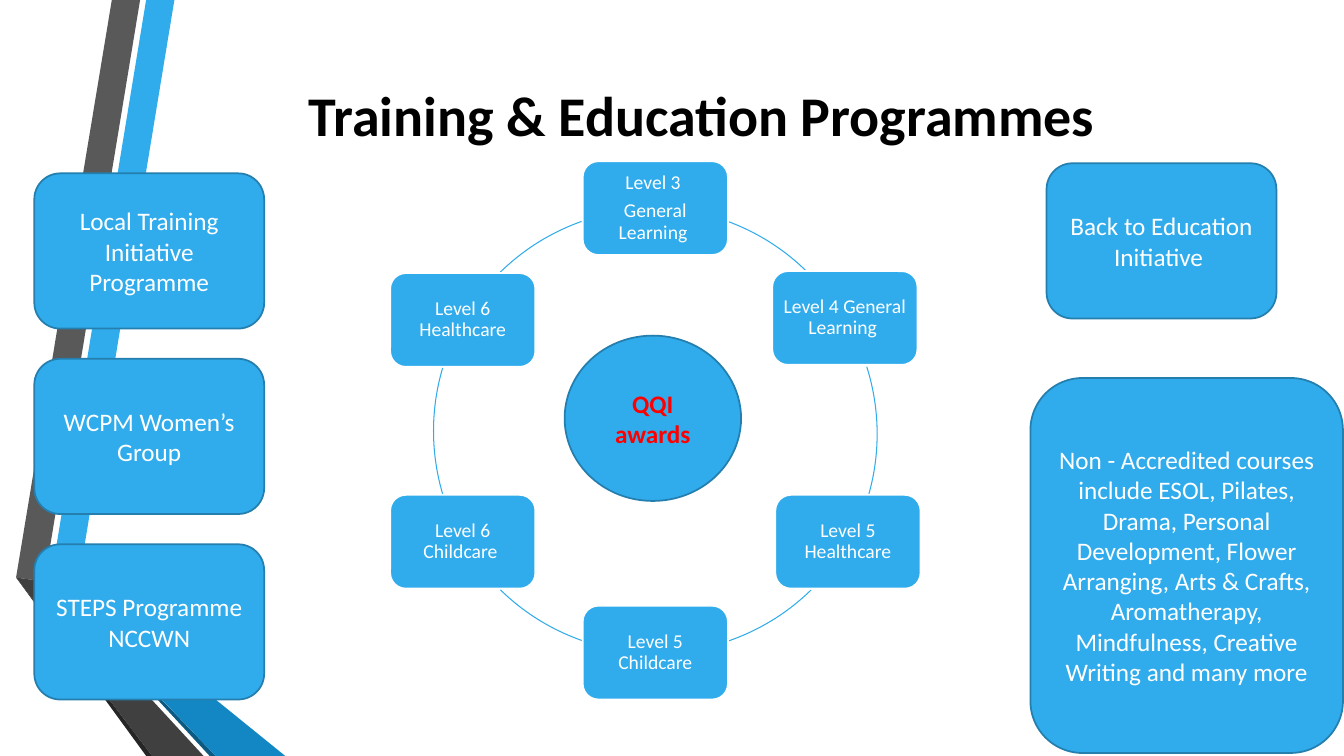
from pptx import Presentation
from pptx.dml.color import RGBColor
from pptx.enum.shapes import MSO_SHAPE
from pptx.enum.text import MSO_ANCHOR, PP_ALIGN
from pptx.util import Pt

PX = 9144
ROUND, OVAL, ARC = MSO_SHAPE.ROUNDED_RECTANGLE, MSO_SHAPE.OVAL, MSO_SHAPE.ARC
MIDDLE, CENTER = MSO_ANCHOR.MIDDLE, PP_ALIGN.CENTER
BLUE, EDGE, WHITE, RED, BLACK = "30ACEC", "247FAF", "FFFFFF", "FF0000", "000000"

RIBBON = [
    ("30ACEC", [(50, 578), (77, 583), (173, 0), (145, 0)]),
    ("595959", [(139, 0), (111, 0), (16, 573), (44, 577)]),
    ("262626", [(16, 573), (145, 750), (151, 750)]),
    ("0C5A82", [(50, 579), (208, 750), (214, 750)]),
    ("1287C3", [(50, 578), (214, 750), (283, 750), (77, 583)]),
    ("404040", [(202, 750), (48, 583), (44, 577), (16, 573), (151, 750)]),
]
LEVELS = [
    ("Level 3 \nGeneral Learning ", 191, 0),
    ("Level 4 General Learning ", 379, 109),
    ("Level 5 Healthcare", 382, 331),
    ("Level 5 Childcare", 191, 441),
    ("Level 6 Childcare ", 0, 331),
    ("Level 6 Healthcare", 0, 111),
]
ARCS = [
    (38, 46, 290.6, 314.1), (42, 50, 342.4, 15.7), (43, 47, 45.7, 70.8),
    (43, 47, 109.4, 134.4), (43, 47, 163.5, 196.5), (43, 47, 225.6, 250.5),
]
LOCAL = ["Local Training Initiative Programme", "WCPM Women’s Group",
         "STEPS Programme\nNCCWN"]
COURSES = ("Non - Accredited courses include ESOL, Pilates, Drama, Personal "
           "Development, Flower Arranging, Arts & Crafts, Aromatherapy, "
           "Mindfulness, Creative Writing and many more")


def color(code):
    """Turn a hex string into a colour."""
    return RGBColor.from_string(code)


def place(shape, box):
    """Move a shape to a box given in px."""
    shape.left, shape.top, shape.width, shape.height = [n * PX for n in box]


def write(shape, text, size, ink=WHITE, bold=False):
    """Fill a shape with centred text."""
    frame = shape.text_frame
    frame.text = text
    frame.word_wrap = True
    frame.vertical_anchor = MIDDLE
    for para in frame.paragraphs:
        para.alignment = CENTER
        font = para.font
        font.name, font.size, font.bold = "Calibri", Pt(size), bold
        font.color.rgb = color(ink)
    return frame


def add_form(slide, kind, box, line, width=1.25):
    """Add a blue preset shape with an outline."""
    shape = slide.shapes.add_shape(kind, *[n * PX for n in box])
    shape.shadow.inherit = False
    shape.fill.solid()
    shape.fill.fore_color.rgb = color(BLUE)
    shape.line.color.rgb = color(line)
    shape.line.width = Pt(width)
    return shape


def add_card(slide, text, box):
    """Add a rounded card with large text."""
    write(add_form(slide, ROUND, box, EDGE), text, 18)


def add_ribbon(slide):
    """Draw the folded ribbon along the left edge."""
    for code, points in RIBBON:
        pen = slide.shapes.build_freeform(*points[0], scale=PX)
        pen.add_line_segments(points[1:], close=True)
        band = pen.convert_to_shape()
        band.shadow.inherit = False
        band.fill.solid()
        band.fill.fore_color.rgb = color(code)
        band.line.fill.background()


def add_title(slide, text, box):
    """Set the slide title."""
    place(slide.shapes.title, box)
    write(slide.shapes.title, text, 40, BLACK, True)


def add_cycle(slide, left, top):
    """Draw the ring of award levels around its hub."""
    for x, y, start, end in ARCS:
        arc = add_form(slide, ARC, (left + x, top + y, 441, 441), BLUE, 0.75)
        arc.fill.background()
        arc.adjustments[0], arc.adjustments[1] = start * 0.6, end * 0.6
    for text, x, y in LEVELS:
        node = add_form(slide, ROUND, (left + x, top + y, 144, 93), WHITE)
        frame = write(node, text, 14)
        frame.margin_left = frame.margin_right = 6 * PX
        frame.margin_top = frame.margin_bottom = 6 * PX
        for para in frame.paragraphs:
            para.line_spacing = 0.9
            para.space_after = Pt(5)
    hub = add_form(slide, OVAL, (left + 173, top + 173, 175, 164), EDGE)
    write(hub, "QQI awards", 18, RED, True)


def add_local(slide, left, top):
    """Stack the local programme cards."""
    for row, text in enumerate(LOCAL):
        add_card(slide, text, (left, top + row * 184, 228, 154))


def add_further(slide, left, top):
    """Place the further education cards."""
    add_card(slide, "Back to Education Initiative ", (left + 16, top, 228, 154))
    add_card(slide, COURSES, (left, top + 213, 310, 372))


def main():
    """Build and save the slide."""
    deck = Presentation()
    deck.slide_width, deck.slide_height = 1333 * PX, 750 * PX
    slide = deck.slides.add_slide(deck.slide_layouts[5])
    add_ribbon(slide)
    add_title(slide, "Training & Education Programmes", (148, 17, 1096, 192))
    add_cycle(slide, 387, 160)
    add_local(slide, 34, 172)
    add_further(slide, 1022, 162)
    deck.save("out.pptx")


if __name__ == "__main__":
    main()
